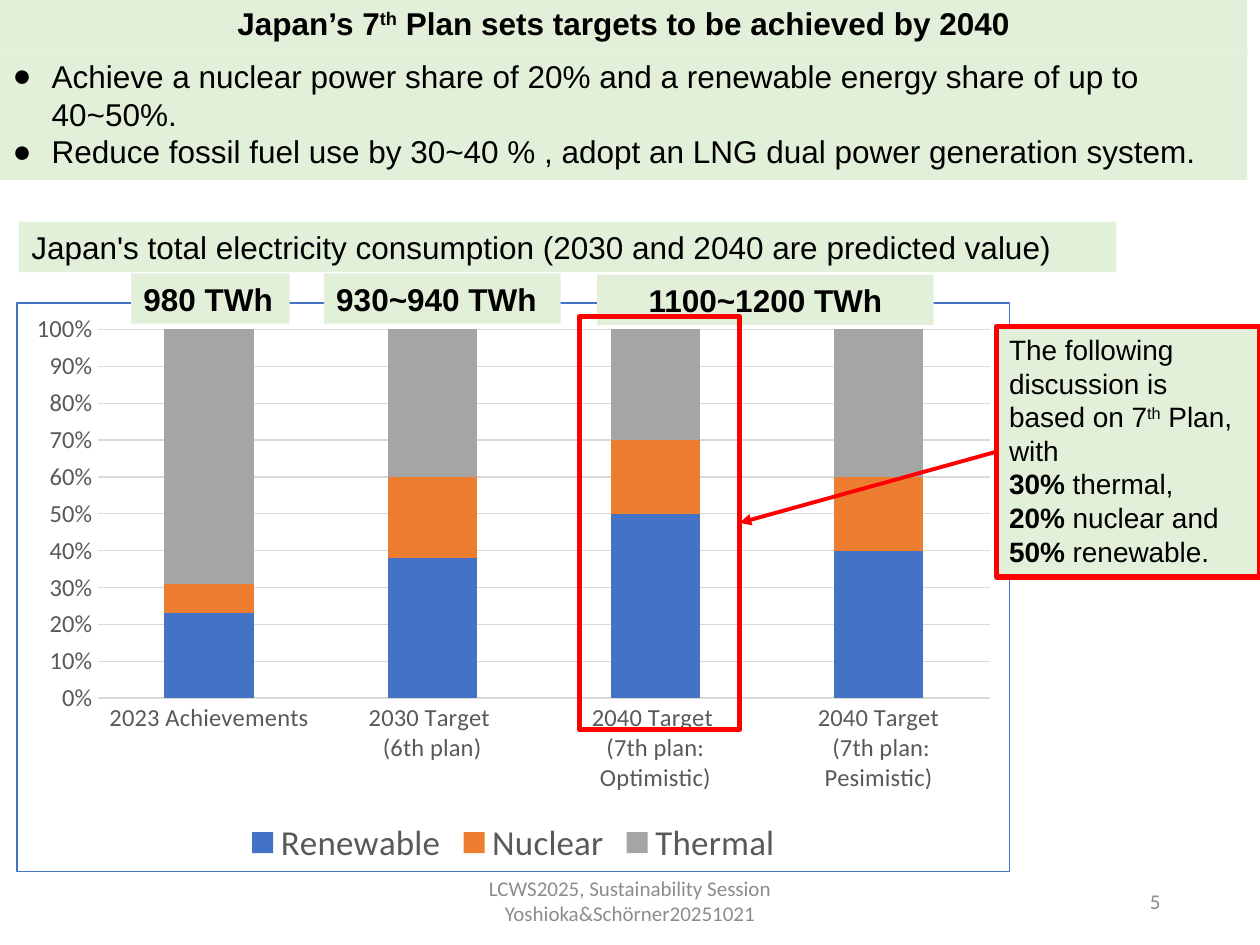
from dataclasses import dataclass
from lxml.etree import SubElement
from pptx import Presentation
from pptx.chart.data import CategoryChartData
from pptx.dml.color import RGBColor
from pptx.enum.chart import XL_CHART_TYPE, XL_LEGEND_POSITION, XL_TICK_MARK
from pptx.enum.shapes import MSO_CONNECTOR, MSO_SHAPE
from pptx.enum.text import MSO_ANCHOR, MSO_AUTO_SIZE, PP_ALIGN
from pptx.oxml import parse_xml
from pptx.oxml.ns import nsdecls, qn
from pptx.util import Inches, Pt

MINT = RGBColor(0xE2, 0xF0, 0xD9)
RED = RGBColor(0xFF, 0, 0)
BLACK = RGBColor(0, 0, 0)
BLUE = RGBColor(0x44, 0x72, 0xC4)
ORANGE = RGBColor(0xED, 0x7D, 0x31)
SILVER = RGBColor(0xA5, 0xA5, 0xA5)
SLATE = RGBColor(0x59, 0x59, 0x59)
PALE = RGBColor(0xD9, 0xD9, 0xD9)
GREY = RGBColor(0x8C, 0x8C, 0x8C)

WIDE, HIGH = Inches(10), Inches(7.5)
COLS, ROWS = 100, 75
INDENT = Inches(0.31)


@dataclass(frozen=True)
class Area:
    col: float
    row: float
    cols: float
    rows: float

    def box(self) -> tuple[int, ...]:
        return (int(WIDE * self.col / COLS), int(HIGH * self.row / ROWS),
                int(WIDE * self.cols / COLS), int(HIGH * self.rows / ROWS))


@dataclass(frozen=True)
class Bit:
    text: str
    bold: bool = False
    lift: bool = False


@dataclass(frozen=True)
class Style:
    size: int = 18
    font: str = "Arial"
    color: RGBColor = BLACK
    align: PP_ALIGN = PP_ALIGN.LEFT
    anchor: MSO_ANCHOR = MSO_ANCHOR.TOP


@dataclass(frozen=True)
class Label:
    area: Area
    bit: Bit
    align: PP_ALIGN = PP_ALIGN.LEFT


@dataclass(frozen=True)
class Series:
    name: str
    values: tuple[int, ...]
    color: RGBColor


CENTER = Style(align=PP_ALIGN.CENTER)
HEAD = [[Bit("Japan’s 7", True), Bit("th", True, True),
         Bit(" Plan sets targets to be achieved by 2040", True)]]
GOALS = [
    [Bit("Achieve a nuclear power share of 20% and a renewable energy share of up to 40~50%.")],
    [Bit("Reduce fossil fuel use by 30~40 % , adopt an LNG dual power generation system.")],
]
LABELS = [
    Label(Area(10.4, 21.7, 12.6, 4), Bit("980 TWh", True)),
    Label(Area(25.7, 21.7, 18.8, 4), Bit("930~940 TWh", True)),
    Label(Area(47.4, 21.8, 26.7, 4), Bit("1100~1200 TWh", True), PP_ALIGN.CENTER),
    Label(Area(1.5, 17.6, 87.1, 4), Bit(
        "Japan's total electricity consumption (2030 and 2040 are predicted value)")),
]
NOTE = [
    [Bit("The following discussion is based on 7"), Bit("th", lift=True), Bit(" Plan, with")],
    [Bit("30%", True), Bit(" thermal,")],
    [Bit("20%", True), Bit(" nuclear and "), Bit("50%", True), Bit(" renewable.")],
]
PLANS = ["2023 Achievements", "2030 Target \n(6th plan)",
         "2040 Target \n(7th plan: Optimistic)", "2040 Target\n (7th plan: Pesimistic)"]
POWER = [
    Series("Renewable", (23, 38, 50, 40), BLUE),
    Series("Nuclear", (8, 22, 20, 20), ORANGE),
    Series("Thermal", (69, 40, 30, 40), SILVER),
]


def write(shape, lines: list[list[Bit]], style: Style) -> None:
    frame = shape.text_frame
    frame.word_wrap = True
    frame.auto_size = MSO_AUTO_SIZE.NONE
    frame.vertical_anchor = style.anchor
    frame.text = "\n".join("" for _ in lines)
    for para, bits in zip(frame.paragraphs, lines):
        para.alignment = style.align
        para.space_before = Pt(0)
        for bit in bits:
            run = para.add_run()
            run.text = bit.text
            font = run.font
            font.size, font.name, font.bold = Pt(style.size), style.font, bit.bold
            font.color.rgb = style.color
            if bit.lift:
                run._r.get_or_add_rPr().set("baseline", "30000")


def place(shape, area: Area) -> None:
    shape.left, shape.top, shape.width, shape.height = area.box()


def paint(shape) -> None:
    shape.fill.solid()
    shape.fill.fore_color.rgb = MINT


def bullet(para) -> None:
    props = para._p.get_or_add_pPr()
    props.set("marL", str(INDENT))
    props.set("indent", str(-INDENT))
    SubElement(props, qn("a:buChar")).set("char", "●")


def rect(slide, area: Area, filled: bool = True, edged: bool = False):
    shape = slide.shapes.add_shape(MSO_SHAPE.RECTANGLE, *area.box())
    shape.shadow.inherit = False
    if filled:
        paint(shape)
    else:
        shape.fill.background()
    if edged:
        shape.line.color.rgb, shape.line.width = RED, Pt(3)
    else:
        shape.line.fill.background()
    return shape


def dress(font, size: int) -> None:
    font.size, font.name, font.color.rgb = Pt(size), "Calibri", SLATE


def rule(line) -> None:
    line.color.rgb, line.width = PALE, Pt(0.75)


def plot(slide, area: Area) -> None:
    data = CategoryChartData(number_format="0")
    data.categories = PLANS
    for item in POWER:
        data.add_series(item.name, item.values)
    chart = slide.shapes.add_chart(
        XL_CHART_TYPE.COLUMN_STACKED_100, *area.box(), data).chart
    chart.has_title = False
    dress(chart.font, 10)
    chart.has_legend = True
    chart.legend.position = XL_LEGEND_POSITION.BOTTOM
    chart.legend.include_in_layout = False
    dress(chart.legend.font, 20)
    bars = chart.plots[0]
    bars.gap_width, bars.overlap, bars.vary_by_categories = 150, 100, False
    for series, item in zip(bars.series, POWER):
        series.format.fill.solid()
        series.format.fill.fore_color.rgb = item.color
    base, scale = chart.category_axis, chart.value_axis
    for axis in (base, scale):
        axis.major_tick_mark = axis.minor_tick_mark = XL_TICK_MARK.NONE
        dress(axis.tick_labels.font, 14)
    rule(base.format.line)
    scale.format.line.fill.background()
    rule(scale.major_gridlines.format.line)
    scale.tick_labels.number_format = "0%"
    scale.tick_labels.number_format_is_linked = False
    border = parse_xml(
        f'<c:spPr {nsdecls("c", "a")}><a:noFill/><a:ln w="{Pt(0.75)}"><a:solidFill>'
        f'<a:srgbClr val="{BLUE}"/></a:solidFill></a:ln></c:spPr>')
    chart._chartSpace.find(qn("c:chart")).addnext(border)


def arrow(slide, start, end) -> None:
    link = slide.shapes.add_connector(MSO_CONNECTOR.STRAIGHT, 0, 0, 0, 0)
    link.begin_connect(start, 1)
    link.end_connect(end, 3)
    link.line.color.rgb, link.line.width = RED, Pt(2.25)
    SubElement(link.line._get_or_add_ln(), qn("a:tailEnd")).set("type", "triangle")
    SubElement(link._element.spPr, qn("a:effectLst"))


def main() -> None:
    deck = Presentation()
    deck.slide_width, deck.slide_height = WIDE, HIGH
    slide = deck.slides.add_slide(deck.slide_layouts[1])
    title, body = slide.shapes.title, slide.placeholders[1]
    for shape, area, lines, style in (
            (title, Area(0, -0.2, 99, 4.2), HEAD, CENTER),
            (body, Area(0, 4, 99, 10.3), GOALS, Style())):
        place(shape, area)
        paint(shape)
        write(shape, lines, style)
    for para in body.text_frame.paragraphs:
        bullet(para)
    plot(slide, Area(1.3, 24, 78.9, 45.2))
    for area, text, align in (
            (Area(33.1, 69.5, 33.8, 4),
             "LCWS2025, Sustainability Session Yoshioka&Schörner20251021", PP_ALIGN.CENTER),
            (Area(70.6, 69.5, 22.5, 4), "5", PP_ALIGN.RIGHT)):
        write(slide.shapes.add_textbox(*area.box()), [[Bit(text)]],
              Style(12, "Calibri", GREY, align, MSO_ANCHOR.MIDDLE))
    for label in LABELS:
        write(rect(slide, label.area), [[label.bit]], Style(align=label.align))
    note = rect(slide, Area(79.1, 25.9, 20.9, 19.9), edged=True)
    write(note, NOTE, Style(16))
    focus = rect(slide, Area(46, 25.1, 12.7, 32.8), filled=False, edged=True)
    arrow(slide, note, focus)
    deck.save("out.pptx")


if __name__ == "__main__":
    main()
